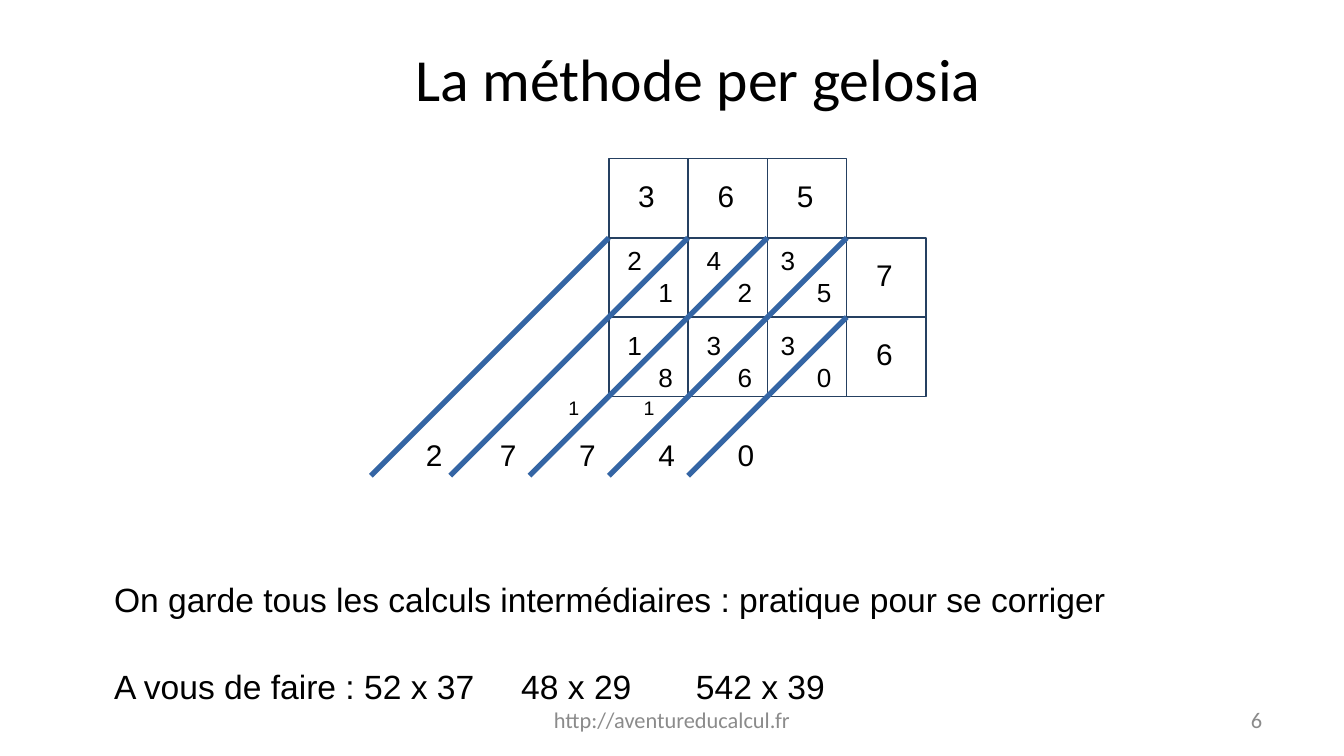
"""Build the slide on the per gelosia multiplication method."""
from lxml.etree import SubElement
from pptx import Presentation
from pptx.dml.color import RGBColor
from pptx.enum.shapes import MSO_CONNECTOR, MSO_SHAPE
from pptx.enum.text import MSO_ANCHOR, PP_ALIGN
from pptx.oxml.ns import qn
from pptx.util import Inches, Pt

BLACK = RGBColor(0, 0, 0)
WHITE = RGBColor(255, 255, 255)
GREY = RGBColor(0x8B, 0x8B, 0x8B)
NAVY = RGBColor(0x25, 0x40, 0x61)
BLUE = RGBColor(0x34, 0x65, 0xA4)

TITLE = "La méthode per gelosia"
REMARK = "On garde tous les calculs intermédiaires : pratique pour se corriger"
EXERCISES = ["A vous de faire : 52 x 37", "48 x 29", "542 x 39"]
EXERCISE_TABS = [3.03, 4.33]
FOOTER = "http://aventureducalcul.fr"
PAGE = "6"

MULTIPLICAND = "365"
MULTIPLIER = "76"
PRODUCTS = [["21", "42", "35"], ["18", "36", "30"]]
RESULT = "27740"
CARRIES = [("1", 4.13), ("1", 4.69)]
DIAGONALS = [(0, 1), (1, 1), (2, 1), (3, 1), (3, 2)]

LEFT, TOP, CELL = 4.53, 1.18, 0.59
COLS, LAST_ROW = len(MULTIPLICAND), 4
TENS_DX, TENS_DY = [0.04, 0.04, 0], [0, 0.04]


def grid_xy(col, row):
    return LEFT + col * CELL, TOP + row * CELL


def add_text(s, text, x, y, w, h, size, font="Arial", color=BLACK,
             align=PP_ALIGN.LEFT, anchor=MSO_ANCHOR.TOP):
    tf = s.shapes.add_textbox(Inches(x), Inches(y), Inches(w), Inches(h)).text_frame
    tf.word_wrap = True
    tf.vertical_anchor = anchor
    tf.text = text
    for p in tf.paragraphs:
        p.alignment = align
        for r in p.runs:
            r.font.size, r.font.name, r.font.color.rgb = Pt(size), font, color
    return tf


def add_digit(s, digit, x, y):
    add_text(s, digit, x, y, 0.28, 0.35, 16)


def add_cell(s, col, row):
    x, y = grid_xy(col, row)
    sp = s.shapes.add_shape(MSO_SHAPE.RECTANGLE, Inches(x), Inches(y), Inches(CELL), Inches(CELL))
    sp.shadow.inherit = False
    sp.fill.solid()
    sp.fill.fore_color.rgb = WHITE
    sp.line.color.rgb = NAVY
    sp.line.width = Pt(0)


def add_diagonal(s, col, row):
    drop = LAST_ROW - row
    ends = [Inches(v) for v in grid_xy(col, row) + grid_xy(col - drop, LAST_ROW)]
    line = s.shapes.add_connector(MSO_CONNECTOR.STRAIGHT, *ends)
    line.line.color.rgb = BLUE
    line.line.width = Pt(2.83)
    SubElement(line._element.spPr, qn("a:effectLst"))


def add_grid(s):
    for row in range(3):
        for col in range(COLS + (row > 0)):
            add_cell(s, col, row)
    factors = [(d, col, 0) for col, d in enumerate(MULTIPLICAND)]
    factors += [(d, COLS, row) for row, d in enumerate(MULTIPLIER, 1)]
    for digit, col, row in factors:
        x, y = grid_xy(col, row)
        add_digit(s, digit, x + 0.12, y + 0.09)
    for col, row in DIAGONALS:
        add_diagonal(s, col, row)
    for row, products in enumerate(PRODUCTS):
        for col, (tens, units) in enumerate(products):
            x, y = grid_xy(col, row + 1)
            y += TENS_DY[row]
            add_text(s, tens, x + TENS_DX[col], y, 0.39, 0.32, 14)
            add_text(s, units, x + 0.27, y + 0.24, 0.39, 0.32, 14)


def add_result(s):
    for digit, x in CARRIES:
        add_text(s, digit, x, 2.9, 0.39, 0.26, 10.5)
    for i, digit in enumerate(RESULT):
        add_digit(s, digit, 3.07 if i == 0 else 3.03 + i * CELL, 3.2)


def add_instructions(s):
    tf = add_text(s, REMARK + "\n" + "\t".join(EXERCISES), 0.75, 4.26, 8.31, 0.98, 18)
    p = tf.paragraphs[1]
    tabs = SubElement(p._p.get_or_add_pPr(), qn("a:tabLst"))
    for pos in EXERCISE_TABS:
        SubElement(tabs, qn("a:tab"), pos=str(Inches(pos)), algn="l")
    p.space_before = Pt(21.5)
    p.line_spacing = 1.15


def main():
    prs = Presentation()
    prs.slide_width = Inches(10)
    prs.slide_height = prs.slide_width * 9 // 16
    s = prs.slides.add_slide(prs.slide_layouts[6])
    for text, x, w, align in [(FOOTER, 3.42, 3.16, PP_ALIGN.CENTER), (PAGE, 7.17, 2.32, PP_ALIGN.RIGHT)]:
        add_text(s, text, x, 5.21, w, 0.29, 12, "Calibri", GREY, align, MSO_ANCHOR.MIDDLE)
    add_text(s, TITLE, 2.99, 0.26, 4.72, 0.54, 32, "Calibri")
    add_instructions(s)
    add_grid(s)
    add_result(s)
    prs.save("out.pptx")


if __name__ == "__main__":
    main()
